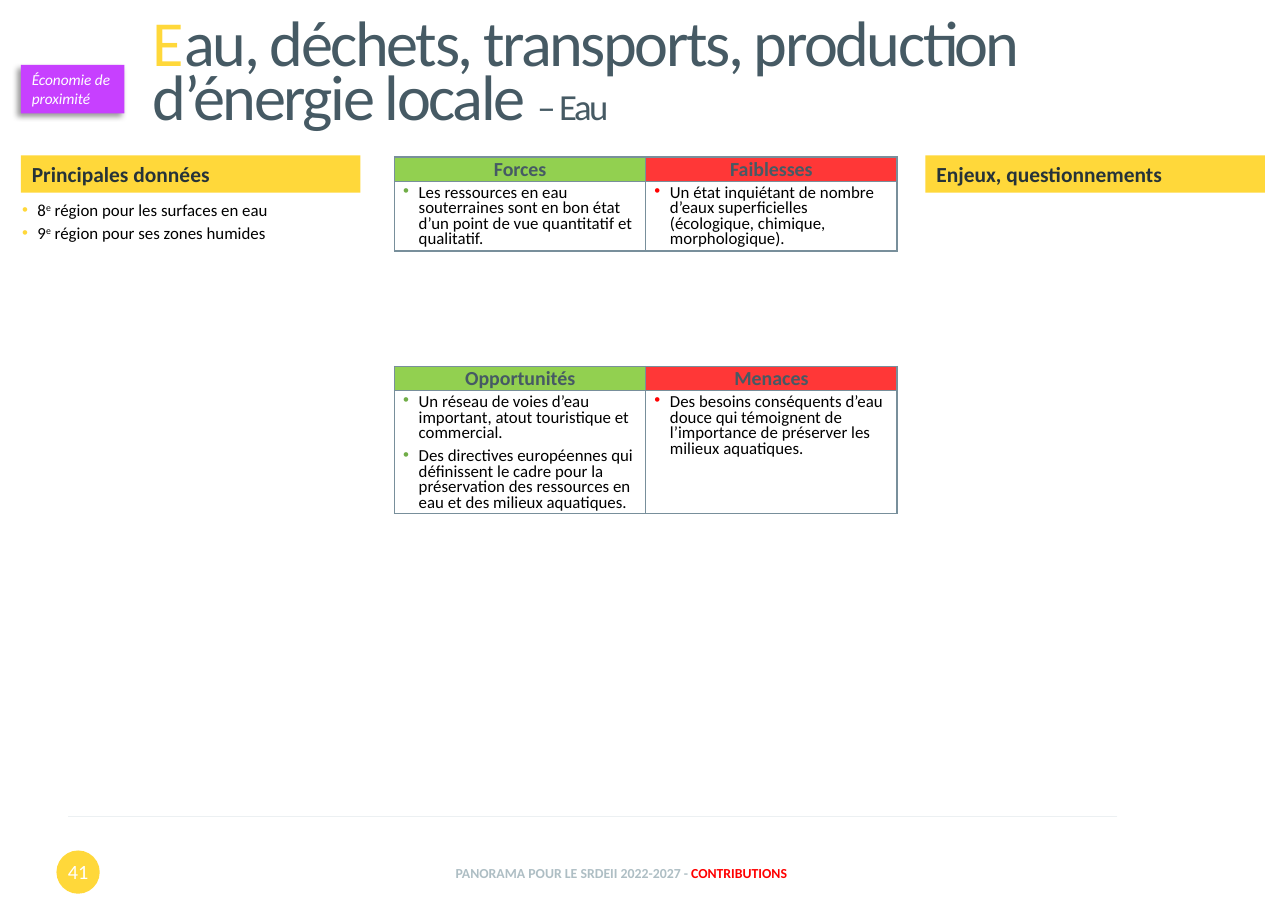
from dataclasses import dataclass

from lxml.etree import SubElement
from pptx import Presentation
from pptx.dml.color import RGBColor
from pptx.enum.shapes import MSO_CONNECTOR as Connector, MSO_SHAPE as Shape
from pptx.enum.text import MSO_ANCHOR as Anchor, PP_ALIGN as Align
from pptx.oxml import parse_xml
from pptx.oxml.ns import nsdecls, qn
from pptx.util import Pt


@dataclass(frozen=True)
class Theme:
    font: str = "Calibri"
    yellow: str = "FFD83A"
    green: str = "92D050"
    red: str = "FF3737"
    green_bullet: str = "70AD47"
    bright_red: str = "FF0000"
    purple: str = "C740FF"
    slate: str = "465A64"
    dark: str = "263338"
    border: str = "788F9B"
    rule: str = "ECF0F2"
    footer: str = "AEBEC4"
    white: str = "FFFFFF"
    black: str = "000000"
    title_size: float = 42
    subtitle_size: float = 24
    heading_size: float = 14
    number_size: float = 13.2
    table_size: float = 13
    body_size: float = 11
    tag_size: float = 10
    footer_size: float = 9


THEME = Theme()
COLUMN_WIDTH = 221.8
HEADER_HEIGHT = 15.8


def rgb(color):
    return RGBColor.from_string(color)


def apply(target, values):
    for name, value in values.items():
        setattr(target, name, value)


def add_run(paragraph, text, size, color, run_attributes=None, **style):
    run = paragraph.add_run()
    run.text = text
    apply(run.font, {"name": THEME.font, "size": Pt(size), "bold": False, **style})
    run.font.color.rgb = rgb(color)
    for name, value in (run_attributes or {}).items():
        run.font._element.set(name, value)


def format_frame(frame, anchor=Anchor.TOP, margin=7.2):
    apply(frame, {
        "word_wrap": True, "vertical_anchor": anchor,
        "margin_left": Pt(margin), "margin_right": Pt(margin),
        "margin_top": Pt(3.6), "margin_bottom": Pt(3.6),
    })
    return frame


def add_box(slide, kind, box, color):
    shape = slide.shapes.add_shape(kind, *map(Pt, box))
    shape.shadow.inherit = False
    shape.fill.solid()
    shape.fill.fore_color.rgb = rgb(color)
    shape.line.fill.background()
    return shape


def add_text(slide, box, runs, anchor=Anchor.MIDDLE, **paragraph_format):
    frame = format_frame(slide.shapes.add_textbox(*map(Pt, box)).text_frame, anchor)
    paragraph = frame.paragraphs[0]
    apply(paragraph, paragraph_format)
    for text, size, color, style in runs:
        add_run(paragraph, text, size, color, **style)


def add_bullets(frame, items, bullet_color):
    for index, parts in enumerate(items):
        paragraph = frame.add_paragraph() if index else frame.paragraphs[0]
        properties = paragraph._p.get_or_add_pPr()
        properties.set("marL", str(Pt(10.8)))
        properties.set("indent", str(-Pt(10.1)))
        color = SubElement(properties, qn("a:buClr"))
        SubElement(color, qn("a:srgbClr"), val=bullet_color)
        SubElement(properties, qn("a:buFont"), typeface="Arial")
        SubElement(properties, qn("a:buChar"), char="•")
        apply(paragraph, {
            "alignment": Align.LEFT, "line_spacing": 0.75,
            "space_before": Pt(2 if index else 0), "space_after": Pt(3),
        })
        for text, attributes in parts:
            add_run(paragraph, text, THEME.body_size, THEME.black, attributes)


def add_panel(slide, left, heading, items=()):
    body = add_box(slide, Shape.RECTANGLE, (left, 130.3, COLUMN_WIDTH, 379.4), THEME.white)
    add_bullets(format_frame(body.text_frame, margin=0), items, THEME.yellow)
    banner = add_box(slide, Shape.RECTANGLE, (left, 101.5, COLUMN_WIDTH, 24.5), THEME.yellow)
    paragraph = format_frame(banner.text_frame).paragraphs[0]
    paragraph.alignment = Align.JUSTIFY
    add_run(paragraph, heading, THEME.heading_size, THEME.dark, bold=True)


def format_cell(cell, fill, vertical_margin):
    apply(cell, {
        "margin_left": Pt(5), "margin_right": Pt(5),
        "margin_top": Pt(vertical_margin), "margin_bottom": Pt(vertical_margin),
    })
    properties = cell._tc.get_or_add_tcPr()
    for side in ("lnL", "lnR", "lnT", "lnB"):
        properties.append(parse_xml(
            f'<a:{side} {nsdecls("a")} w="{Pt(1)}"><a:solidFill>'
            f'<a:srgbClr val="{THEME.border}"/></a:solidFill></a:{side}>'))
    cell.fill.solid()
    cell.fill.fore_color.rgb = rgb(fill)


def add_swot_table(slide, top, body_height, columns):
    box = (257.8, top, 328.4, HEADER_HEIGHT + body_height)
    table = slide.shapes.add_table(2, 2, *map(Pt, box)).table
    apply(table, {"first_row": False, "horz_banding": False})
    for row, height in zip(table.rows, (HEADER_HEIGHT, body_height)):
        row.height = Pt(height)
    styles = ((THEME.green, THEME.green_bullet), (THEME.red, THEME.bright_red))
    for index, ((heading, items), (fill, bullet)) in enumerate(zip(columns, styles)):
        table.columns[index].width = Pt(164.2)
        header, body = table.cell(0, index), table.cell(1, index)
        format_cell(header, fill, 0)
        format_cell(body, THEME.white, 2.9)
        paragraph = header.text_frame.paragraphs[0]
        paragraph.alignment = Align.CENTER
        add_run(paragraph, heading, THEME.table_size, THEME.slate, bold=True)
        add_bullets(body.text_frame, [[(item, None)] for item in items], bullet)


def add_rule(slide):
    line = slide.shapes.add_connector(
        Connector.STRAIGHT, Pt(730.1), Pt(533.5), Pt(44.6), Pt(533.5))
    line.line.width = Pt(0.5)
    line.line.color.rgb = rgb(THEME.rule)
    SubElement(line._element.spPr, qn("a:effectLst"))


def add_tag(slide, text):
    tag = add_box(slide, Shape.RECTANGLE, (13.7, 42.5, 67.7, 31.7), THEME.purple)
    effects = tag._element.spPr.find(qn("a:effectLst"))
    effects.append(parse_xml(
        f'<a:outerShdw {nsdecls("a")} blurRad="{Pt(4)}" dist="{Pt(3)}" '
        f'dir="{135 * 60000}" algn="tr" rotWithShape="0"><a:srgbClr val="{THEME.black}">'
        '<a:alpha val="40000"/></a:srgbClr></a:outerShdw>'))
    paragraph = format_frame(tag.text_frame).paragraphs[0]
    paragraph.alignment = Align.LEFT
    add_run(paragraph, text, THEME.tag_size, THEME.white, italic=True)


def main():
    presentation = Presentation()
    apply(presentation, {"slide_width": Pt(841.68), "slide_height": Pt(595.44)})
    slide = presentation.slides.add_slide(presentation.slide_layouts[6])

    add_rule(slide)
    add_box(slide, Shape.OVAL, (36.9, 555.9, 28.3, 28.3), THEME.yellow)
    add_text(slide, (32.4, 553.9, 37.4, 31.7),
             [("41", THEME.number_size, THEME.white, {})], alignment=Align.CENTER)

    superscript = {"baseline": "30000"}
    add_panel(slide, 13.7, "Principales données", [
        [("8", None), ("e", superscript), (" région pour les surfaces en eau", None)],
        [("9", None), ("e", superscript), (" région pour ses zones humides", None)],
    ])
    add_swot_table(slide, 102.7, 45.2, (
        ("Forces", ["Les ressources en eau souterraines sont en bon état d’un point de vue "
                    "quantitatif et qualitatif."]),
        ("Faiblesses", ["Un état inquiétant de nombre d’eaux superficielles (écologique, "
                        "chimique, morphologique)."]),
    ))
    add_swot_table(slide, 239.5, 80.2, (
        ("Opportunités", ["Un réseau de voies d’eau important, atout touristique et commercial.",
                          "Des directives européennes qui définissent le cadre pour la "
                          "préservation des ressources en eau et des milieux aquatiques."]),
        ("Menaces", ["Des besoins conséquents d’eau douce qui témoignent de l’importance de "
                     "préserver les milieux aquatiques."]),
    ))
    add_panel(slide, 604.8, "Enjeux, questionnements")

    bold = {"bold": True}
    add_text(slide, (80.6, 555.1, 650.9, 31.7), [
        ("PANORAMA POUR LE SRDEII 2022-2027 - ", THEME.footer_size, THEME.footer, bold),
        ("CONTRIBUTIONS", THEME.footer_size, THEME.bright_red, bold),
    ], alignment=Align.CENTER)
    add_tag(slide, "Économie de proximité")

    tight = {"run_attributes": {"spc": "-160"}}
    add_text(slide, (92.9, 8.6, 715.7, 80.6), [
        ("E", THEME.title_size, THEME.yellow, tight),
        ("au, déchets, transports, production d’énergie locale ",
         THEME.title_size, THEME.slate, tight),
        ("– Eau", THEME.subtitle_size, THEME.slate, tight),
    ], Anchor.BOTTOM, line_spacing=0.7)
    presentation.save("out.pptx")


if __name__ == "__main__":
    main()
